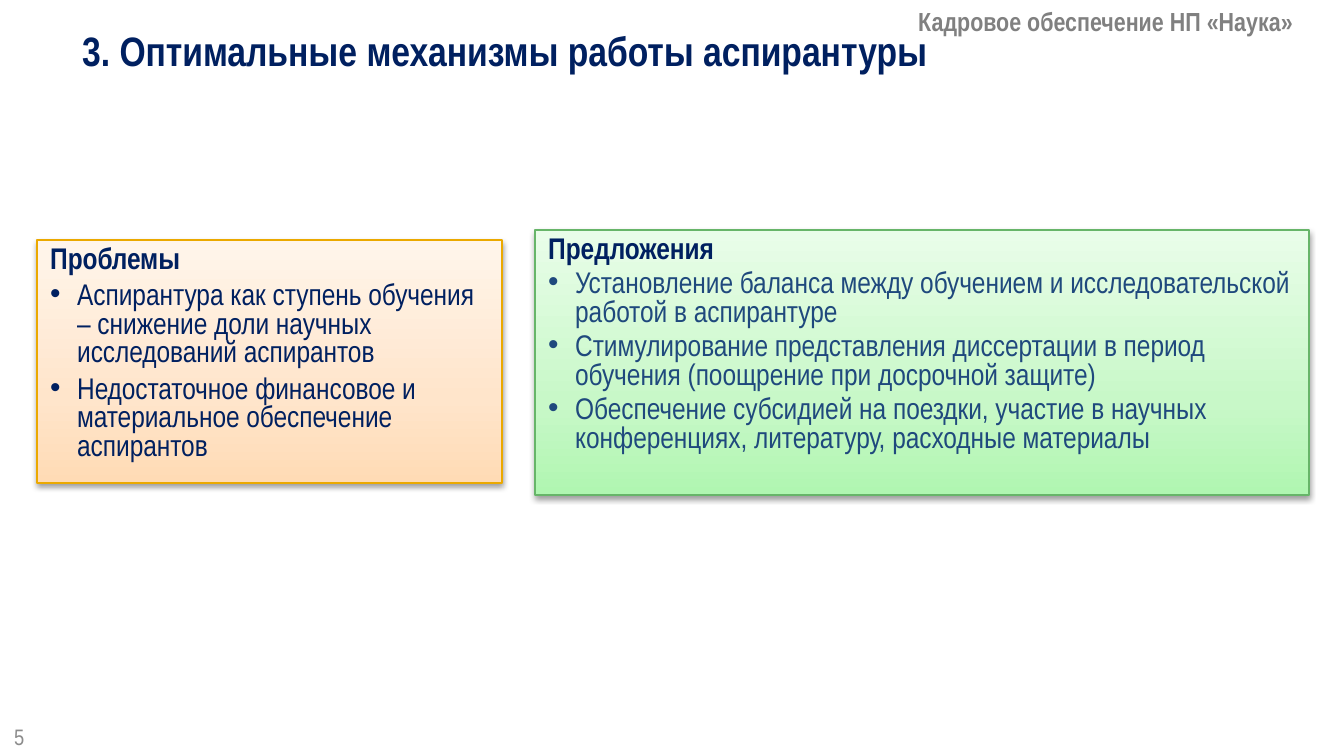
from lxml.etree import SubElement
from pptx import Presentation
from pptx.dml.color import RGBColor
from pptx.enum.shapes import MSO_SHAPE
from pptx.enum.text import MSO_ANCHOR, PP_ALIGN
from pptx.oxml import parse_xml
from pptx.oxml.ns import nsdecls, qn
from pptx.util import Emu, Pt

SCALE = 914400 / 134.4  # EMU per px
FONT = "Arial Narrow"
NAVY, BLUE = "002060", "1F497D"


def px(*lengths):
    return [Emu(round(n * SCALE)) for n in lengths]


def add_run(p, text, size, color, bold=False):
    r = p.add_run()
    r.text = text
    r.font.name, r.font.size, r.font.bold = FONT, Pt(size), bold
    r.font.color.rgb = RGBColor.from_string(color)


prs = Presentation()
prs.slide_width, prs.slide_height = px(1344, 756)
s = prs.slides.add_slide(prs.slide_layouts[6])

# Title, slide number and running header: box, text, size, colour, bold, line spacing, space
labels = [
    ((69, 28, 1253, 54), "3. Оптимальные механизмы работы аспирантуры", 22, NAVY, True, 0.8, 6),
    ((1, 717, 55, 40), "5", 12, "8C8C8C", False, 1.0, 0),
    ((905, 4, 431, 40), "Кадровое обеспечение НП «Наука»", 14, "808080", True, 0.85, 2),
]
for box, text, size, color, bold, spacing, space in labels:
    tf = s.shapes.add_textbox(*px(*box)).text_frame
    tf.word_wrap = True
    if text == "5":
        tf.vertical_anchor = MSO_ANCHOR.MIDDLE
    p = tf.paragraphs[0]
    p.line_spacing, p.space_after = spacing, Pt(space)
    add_run(p, text, size, color, bold)

# Panels: box, gradient from bottom to top, line, space after, bullet colour, heading, bullets
panels = [
    ((37, 240, 465, 243), ("FFDBB5", "FFE5CB", "FFF5EB"), "EBA900", 4, NAVY, "Проблемы", [
        "Аспирантура как ступень обучения – снижение доли научных исследований аспирантов",
        "Недостаточное финансовое и материальное обеспечение аспирантов",
    ]),
    ((535, 230, 774, 265), ("B0F6B1", "C8F8C8", "E9FDE9"), "67B569", 3, BLUE, "Предложения", [
        "Установление баланса между обучением и исследовательской работой в аспирантуре",
        "Стимулирование представления диссертации в период обучения (поощрение при досрочной защите)",
        "Обеспечение субсидией на поездки, участие в научных конференциях, литературу, расходные материалы",
    ]),
]
indent = px(27)[0]
for box, colors, line, space, color, heading, bullets in panels:
    sp = s.shapes.add_shape(MSO_SHAPE.RECTANGLE, *px(*box))
    sp.line.color.rgb = RGBColor.from_string(line)
    sp.line.width = Pt(0.75)
    sp.shadow.inherit = False
    spPr = sp._element.spPr
    stops = "".join(
        f'<a:gs pos="{pos}000"><a:srgbClr val="{c}"/></a:gs>'
        for pos, c in zip((0, 35, 100), colors))
    spPr.find(qn("a:prstGeom")).addnext(parse_xml(
        f'<a:gradFill {nsdecls("a")} rotWithShape="1"><a:gsLst>{stops}</a:gsLst>'
        '<a:lin ang="16200000" scaled="0"/></a:gradFill>'))
    spPr.find(qn("a:effectLst")).append(parse_xml(
        f'<a:outerShdw {nsdecls("a")} blurRad="40000" dist="20000" dir="5400000" rotWithShape="0">'
        '<a:srgbClr val="000000"><a:alpha val="38000"/></a:srgbClr></a:outerShdw>'))

    tf = sp.text_frame
    tf.word_wrap = True
    tf.vertical_anchor = MSO_ANCHOR.TOP
    for i, text in enumerate([heading] + bullets):
        p = tf.add_paragraph() if i else tf.paragraphs[0]
        p.alignment = PP_ALIGN.LEFT
        p.line_spacing, p.space_after = 0.8, Pt(space)
        if i:
            pPr = p._p.get_or_add_pPr()
            pPr.set("marL", str(indent))
            pPr.set("indent", str(-indent))
            SubElement(pPr, qn("a:buFont")).set("typeface", "Arial")
            SubElement(pPr, qn("a:buChar")).set("char", "•")
        add_run(p, text, 16, color if i else NAVY, bold=not i)

prs.save("out.pptx")
